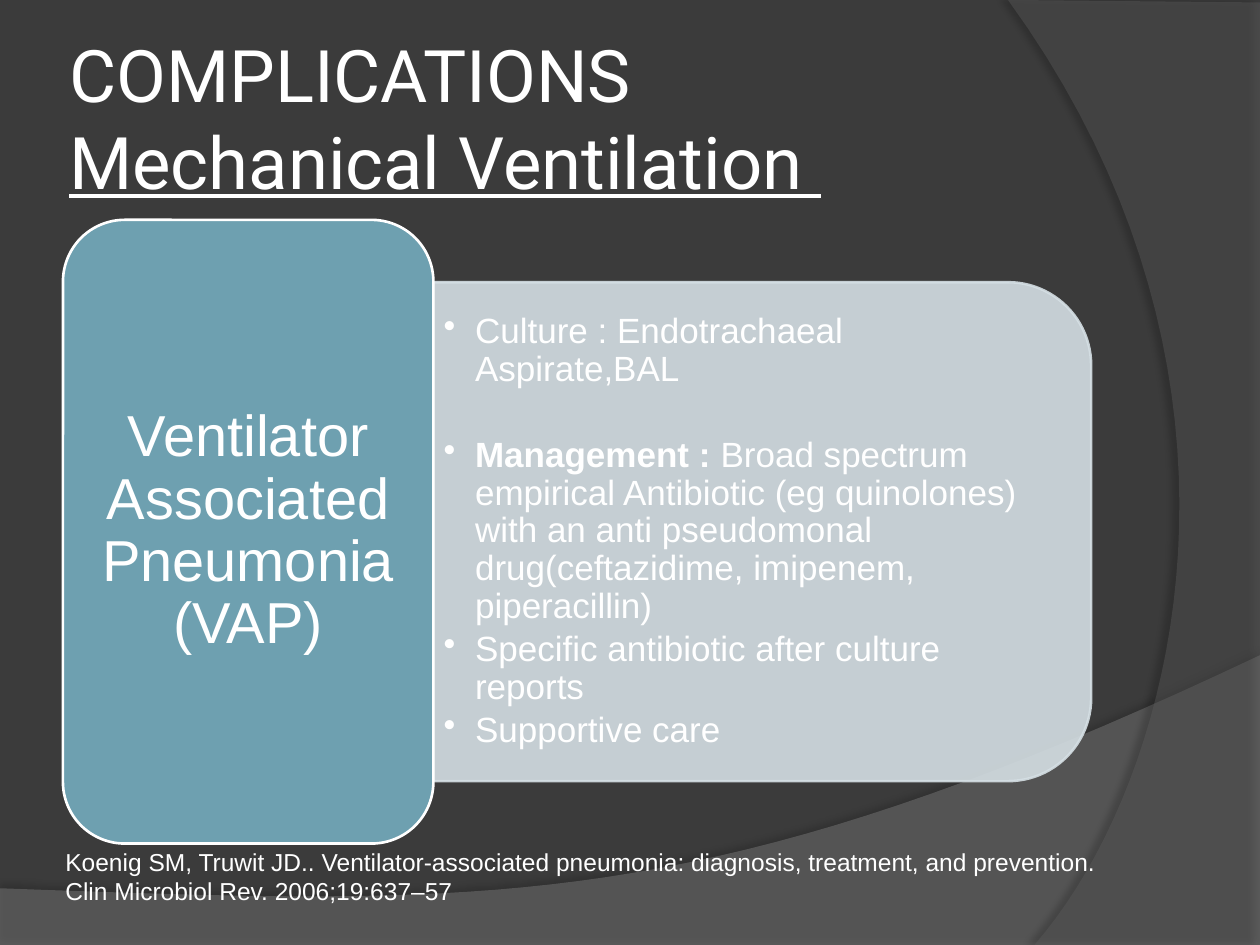
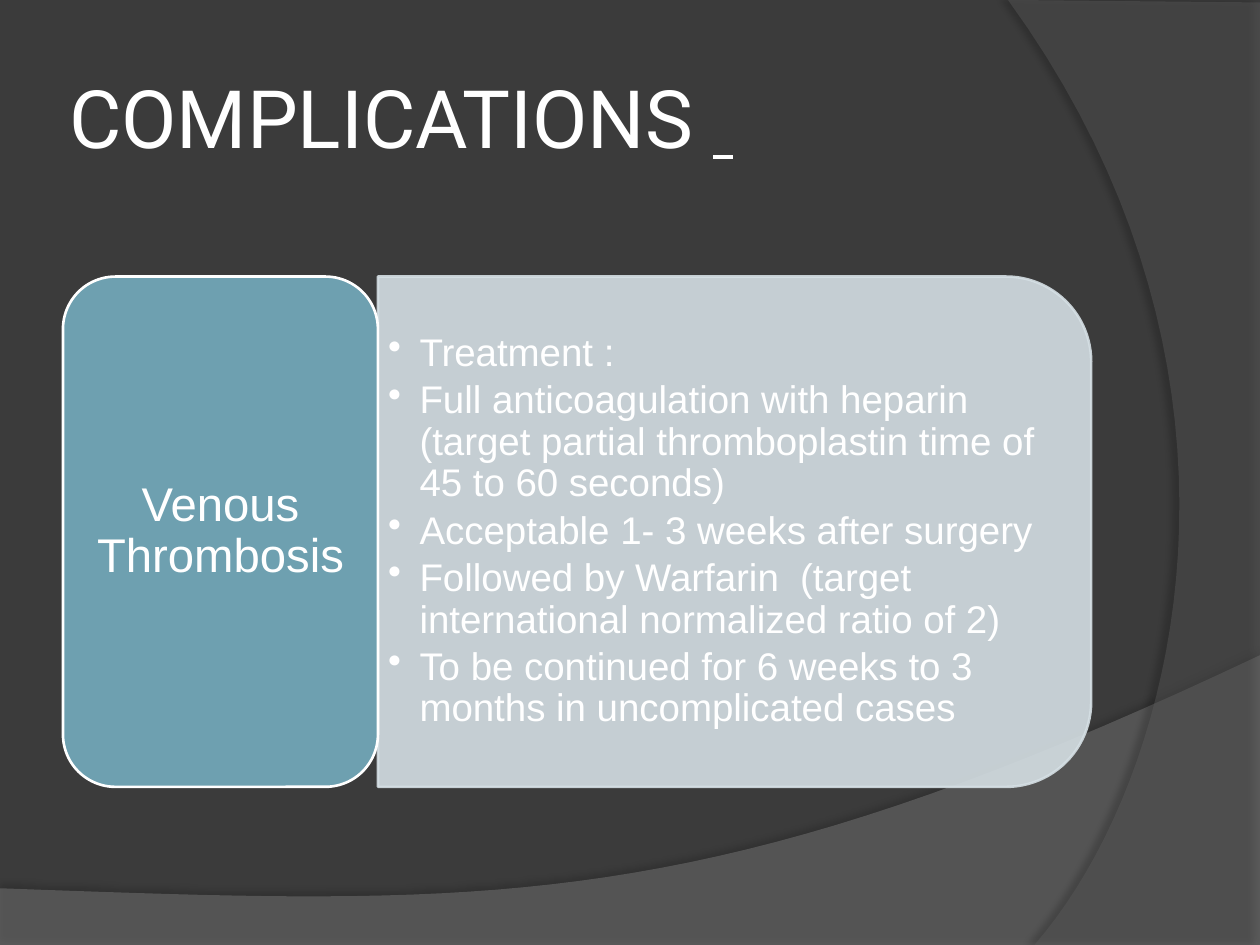
import pptx
import pptx.dml.color
import pptx.enum.shapes
import pptx.enum.text
import pptx.oxml.ns
import pptx.util
from lxml import etree

Inches = pptx.util.Inches
Pt = pptx.util.Pt
SHAPES = pptx.enum.shapes.MSO_SHAPE
ALIGN = pptx.enum.text.PP_ALIGN
ANCHOR = pptx.enum.text.MSO_ANCHOR
qn = pptx.oxml.ns.qn

WHITE, NIGHT, TEAL, MIST = "FFFFFF", "3B3B3B", "6EA0B0", "D5DFE4"
CARD_MIDDLE = 4.22


def color(value):
    return pptx.dml.color.RGBColor.from_string(value)


def curve(start, first, second, end, steps=40):
    points = []
    for step in range(steps + 1):
        t = step / steps
        weights = ((1 - t) ** 3, 3 * t * (1 - t) ** 2, 3 * t * t * (1 - t), t ** 3)
        points.append(tuple(
            sum(weight * point[axis] for weight, point in zip(weights, (start, first, second, end)))
            for axis in (0, 1)))
    return points


FLOOR_WAVE = [(0, 7.51), (10, 7.51)] + curve((10, 5.2), (5.59, 7.29), (3.91, 7.19), (0, 7.05))
SIDE_ARC = [(10, 0.02), (10, 7.5)] + curve((8.21, 7.5), (9.35, 6.19), (10.18, 3), (8, 0))


class Deck:
    """Holds the deck style and the slide being filled."""

    def __init__(self):
        self.presentation = pptx.Presentation()
        self.presentation.slide_width = Inches(10)
        self.presentation.slide_height = Inches(7.5)
        self.slide = None

    def start_slide(self):
        self.slide = self.presentation.slides.add_slide(self.presentation.slide_layouts[6])
        background = self.slide.background.fill
        background.solid()
        background.fore_color.rgb = color(NIGHT)
        self.swoosh(FLOOR_WAVE, "7F7F7F", 45, shadow=(35, 3.5, 270))
        self.swoosh(SIDE_ARC, "5E5E5E", 40, shadow=(45, 4, 180))

    def paint(self, shape, fill, line=None, opacity=100):
        shape.shadow.inherit = False
        shape.fill.solid()
        shape.fill.fore_color.rgb = color(fill)
        if line:
            shape.line.color.rgb = color(line)
            shape.line.width = Pt(1.5)
        else:
            shape.line.fill.background()
        if opacity < 100:
            for tint in shape.element.spPr.iter(qn("a:srgbClr")):
                etree.SubElement(tint, qn("a:alpha"), val=str(opacity * 1000))

    def swoosh(self, points, fill, opacity, shadow):
        outline = [(Inches(x), Inches(y)) for x, y in points]
        builder = self.slide.shapes.build_freeform(*outline[0])
        builder.add_line_segments(outline[1:], close=True)
        shape = builder.convert_to_shape()
        self.paint(shape, fill, opacity=opacity)
        strength, distance, angle = shadow
        cast = etree.SubElement(
            shape.element.spPr.find(qn("a:effectLst")), qn("a:outerShdw"),
            blurRad=str(Pt(4)), dist=str(Pt(distance)), dir=str(angle * 60000),
            algn="ctr", rotWithShape="0")
        black = etree.SubElement(cast, qn("a:srgbClr"), val="000000")
        etree.SubElement(black, qn("a:alpha"), val=str(strength * 1000))

    def frame(self, shape, side=0.1, edge=0.05, anchor=ANCHOR.MIDDLE):
        text = shape.text_frame
        text.word_wrap = True
        text.vertical_anchor = anchor
        text.margin_left = text.margin_right = Inches(side)
        text.margin_top = text.margin_bottom = Inches(edge)
        return text

    def text_box(self, left, top, width, height, **frame_style):
        box = self.slide.shapes.add_textbox(Inches(left), Inches(top), Inches(width), Inches(height))
        return self.frame(box, **frame_style)

    def run(self, paragraph, words, size, font="Arial", bold=False, underline=False):
        run = paragraph.add_run()
        run.text = words
        run.font.name = font
        run.font.size = Pt(size)
        run.font.bold = bold
        run.font.underline = underline
        run.font.color.rgb = color(WHITE)

    def title(self, size, heading, underlined, two_lines=False):
        paragraph = self.text_box(0.5, 0.3, 8.17, 1.25, side=0.05).paragraphs[0]
        self.run(paragraph, heading, size, "Roboto")
        if two_lines:
            paragraph.add_line_break()
        self.run(paragraph, underlined, size, "Roboto", underline=True)

    def detail_panel(self, left, width, height):
        middle = left + width / 2
        panel = self.slide.shapes.add_shape(
            SHAPES.ROUND_2_SAME_RECTANGLE, Inches(middle - height / 2),
            Inches(CARD_MIDDLE - width / 2), Inches(height), Inches(width))
        panel.rotation = 90
        self.paint(panel, MIST, MIST, opacity=90)

    def details(self, left, width, height, items, size, first_gap):
        text = self.text_box(left, CARD_MIDDLE - height / 2, width, height, side=0.08, edge=0.04)
        for index, item in enumerate(items):
            paragraph = text.paragraphs[0] if index == 0 else text.add_paragraph()
            paragraph.line_spacing = 0.9
            if index:
                paragraph.space_before = Pt(first_gap if index == 1 else 0.15 * size)
            properties = paragraph._p.get_or_add_pPr()
            properties.set("marL", str(Inches(0.25)))
            properties.set("indent", str(-Inches(0.25)))
            etree.SubElement(properties, qn("a:buChar"), char="•")
            for words, bold in item:
                self.run(paragraph, words, size, bold=bold)

    def topic(self, left, width, height, words, size, inset):
        card = self.slide.shapes.add_shape(
            SHAPES.ROUNDED_RECTANGLE, Inches(left), Inches(CARD_MIDDLE - height / 2),
            Inches(width), Inches(height))
        self.paint(card, TEAL, WHITE)
        paragraph = self.frame(card, side=inset, edge=inset / 2).paragraphs[0]
        paragraph.alignment = ALIGN.CENTER
        paragraph.line_spacing = 0.9
        self.run(paragraph, words, size)

    def complication(self, name, name_size, name_width, name_height, inset,
                     items, item_size, panel_height, first_gap):
        left = 0.5
        panel_left = left + name_width
        panel_width = 8.66 - panel_left
        self.detail_panel(panel_left, panel_width, panel_height)
        self.details(panel_left, panel_width - 0.2, panel_height - 0.4, items, item_size, first_gap)
        self.topic(left, name_width, name_height, name, name_size, inset)

    def citation(self, words):
        text = self.text_box(0.42, 6.67, 8.75, 0.57, anchor=ANCHOR.TOP)
        self.run(text.paragraphs[0], words, 14)


def main():
    deck = Deck()

    deck.start_slide()
    deck.title(41.4, "COMPLICATIONS ", "Mechanical Ventilation ", two_lines=True)
    pneumonia_care = [
        [("Culture : Endotrachaeal Aspirate,BAL", False)],
        [("Management : ", True),
         ("Broad spectrum empirical Antibiotic (eg quinolones) with an anti pseudomonal "
          "drug(ceftazidime, imipenem, piperacillin)", False)],
        [("Specific antibiotic after culture reports", False)],
        [("Supportive care", False)],
    ]
    deck.complication("Ventilator Associated Pneumonia (VAP)", 33, 2.94, 4.95, 0.14,
                      pneumonia_care, 20, 3.96, first_gap=27.5)
    deck.citation("Koenig SM, Truwit JD.. Ventilator-associated pneumonia: diagnosis, treatment, "
                  "and prevention. Clin Microbiol Rev. 2006;19:637–57")

    deck.start_slide()
    deck.title(46, "COMPLICATIONS ", " ")
    thrombosis_care = [
        [("Treatment :", False)],
        [("Full anticoagulation with heparin (target partial thromboplastin time of "
          "45 to 60 seconds)", False)],
        [("Acceptable 1- 3 weeks after surgery", False)],
        [("Followed by Warfarin  (target international normalized ratio of 2)", False)],
        [("To be continued for 6 weeks to 3 months in uncomplicated cases", False)],
    ]
    deck.complication("Venous Thrombosis", 27, 2.5, 4.05, 0.11,
                      thrombosis_care, 22, 4.05, first_gap=3.3)

    deck.presentation.save("out.pptx")


if __name__ == "__main__":
    main()
